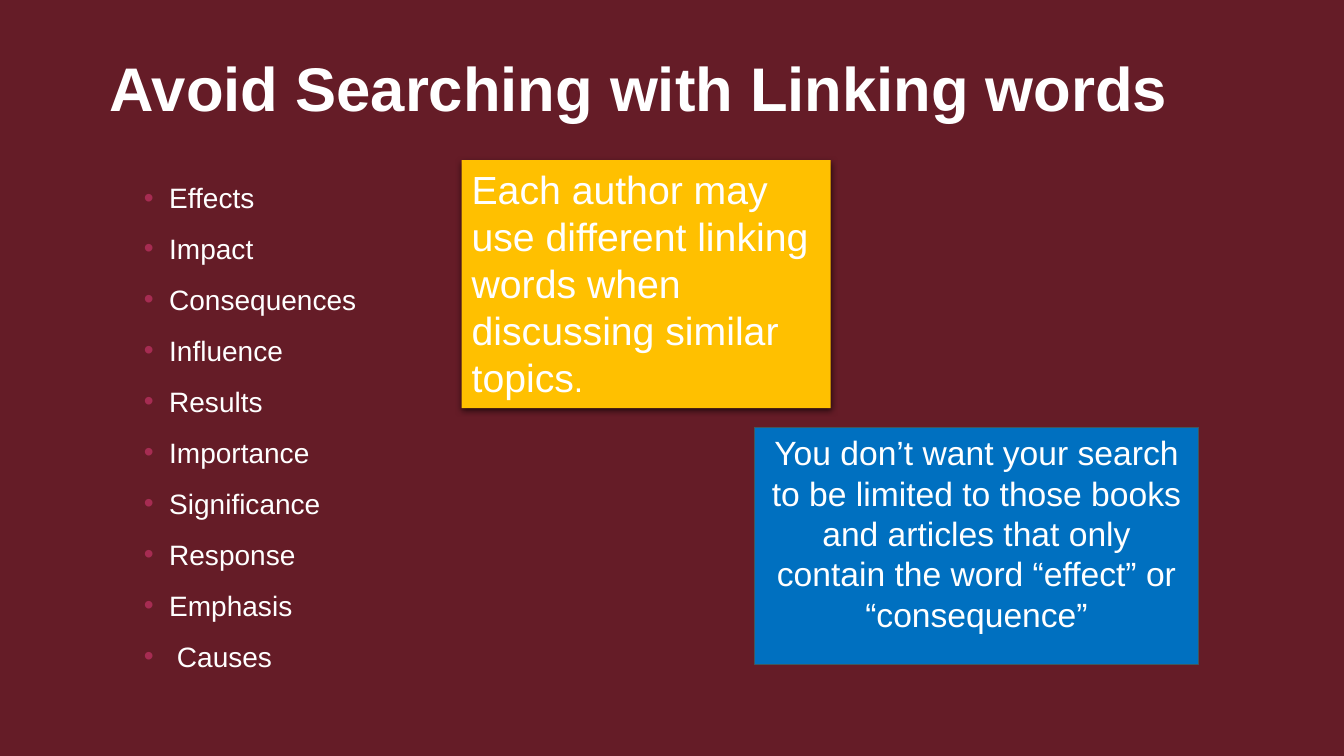
from lxml import etree
from pptx import Presentation
from pptx import util as u
from pptx.dml.color import RGBColor
from pptx.enum import shapes, text
from pptx.oxml import parse_xml
from pptx.oxml.ns import nsdecls, qn

TITLE = "Avoid Searching with Linking words"
LINKING_WORDS = ["Effects", "Impact", "Consequences", "Influence", "Results",
                 "Importance", "Significance", "Response", "Emphasis", " Causes"]
AUTHOR_NOTE = [("Each author may use different linking words when discussing similar topics", 28),
               (".", 24)]
SEARCH_NOTE = [("You don’t want your search to be limited to those books and articles "
                "that only contain the word “effect” or “consequence”", 24)]
COLORS = {"background": "651C27", "text": "FFFFFF", "bullet": "A62C52",
          "author": "FFC000", "search": "0070C0", "outline": "41575D", "shadow": "000000"}
FONT = "Arial"


def color(name):
    return RGBColor.from_string(COLORS[name])


def format_run(run, size, bold=False):
    run.font.name = FONT
    run.font.size = u.Pt(size)
    run.font.bold = bold
    run.font.color.rgb = color("text")


def add_text_box(slide, box, anchor):
    frame = slide.shapes.add_textbox(*map(u.Inches, box)).text_frame
    frame.word_wrap = True
    frame.vertical_anchor = anchor
    return frame


def add_title(slide):
    frame = add_text_box(slide, (0.99, 0.32, 11.13, 1.08), text.MSO_ANCHOR.MIDDLE)
    frame.text = TITLE
    format_run(frame.paragraphs[0].runs[0], 44, True)


def add_bullet(paragraph):
    properties = paragraph._p.get_or_add_pPr()
    properties.set("marL", str(u.Inches(0.25)))
    properties.set("indent", str(u.Inches(-0.25)))
    bullet_color = etree.SubElement(properties, qn("a:buClr"))
    etree.SubElement(bullet_color, qn("a:srgbClr"), val=COLORS["bullet"])
    etree.SubElement(properties, qn("a:buFont"), typeface=FONT)
    etree.SubElement(properties, qn("a:buChar"), char="•")


def add_word_list(slide):
    frame = add_text_box(slide, (1.33, 1.71, 7.1, 5.37), text.MSO_ANCHOR.TOP)
    frame.text = "\n".join(LINKING_WORDS)
    for index, paragraph in enumerate(frame.paragraphs):
        add_bullet(paragraph)
        paragraph.line_spacing = 1.1
        paragraph.space_before = u.Pt(10 if index else 0)
        format_run(paragraph.runs[0], 20)


def add_note(slide, box, fill, runs, alignment):
    shape = slide.shapes.add_shape(shapes.MSO_SHAPE.RECTANGLE, *map(u.Inches, box))
    shape.shadow.inherit = False
    shape.fill.solid()
    shape.fill.fore_color.rgb = color(fill)
    shape.line.fill.background()
    frame = shape.text_frame
    frame.word_wrap = True
    frame.auto_size = text.MSO_AUTO_SIZE.SHAPE_TO_FIT_TEXT
    frame.vertical_anchor = text.MSO_ANCHOR.TOP
    paragraph = frame.paragraphs[0]
    paragraph.alignment = alignment
    for content, size in runs:
        run = paragraph.add_run()
        run.text = content
        format_run(run, size)
    return shape


def add_shadow(shape):
    effects = shape._element.spPr.find(qn("a:effectLst"))
    effects.append(parse_xml(
        f'<a:outerShdw {nsdecls("a")} blurRad="{u.Pt(4.5)}" dist="{u.Pt(1.5)}" '
        f'dir="5400000" rotWithShape="0"><a:srgbClr val="{COLORS["shadow"]}">'
        '<a:alpha val="63000"/></a:srgbClr></a:outerShdw>'))


def main():
    presentation = Presentation()
    presentation.slide_width = u.Inches(13.33)
    presentation.slide_height = u.Inches(7.5)
    slide = presentation.slides.add_slide(presentation.slide_layouts[6])
    slide.background.fill.solid()
    slide.background.fill.fore_color.rgb = color("background")
    add_title(slide)
    add_word_list(slide)
    author_note = add_note(slide, (4.58, 1.59, 3.66, 2.46), "author",
                           AUTHOR_NOTE, text.PP_ALIGN.LEFT)
    add_shadow(author_note)
    search_note = add_note(slide, (7.48, 4.24, 4.41, 2.35), "search",
                           SEARCH_NOTE, text.PP_ALIGN.CENTER)
    search_note.line.color.rgb = color("outline")
    search_note.line.width = u.Pt(0.5)
    presentation.save("out.pptx")


if __name__ == "__main__":
    main()
